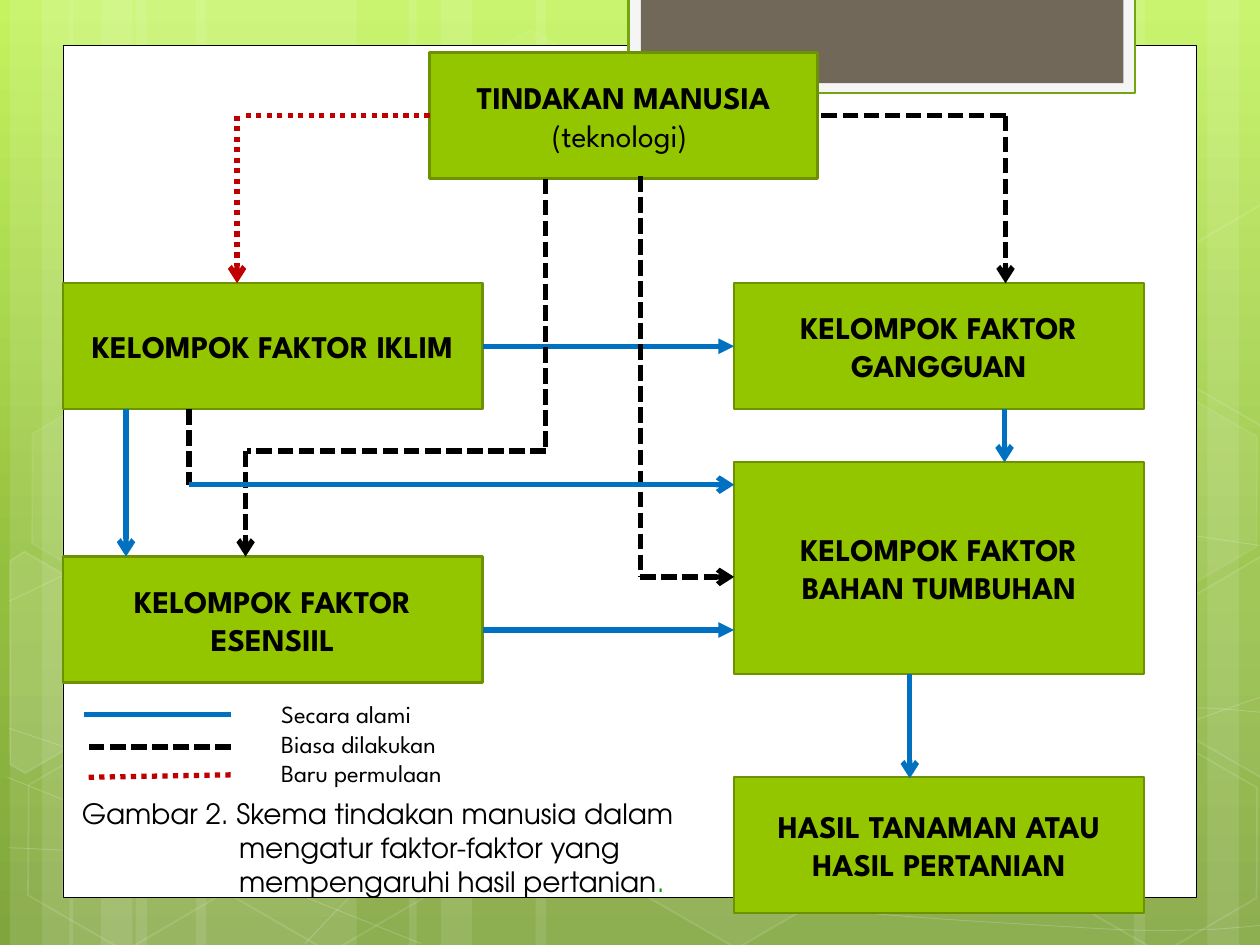
from copy import deepcopy

from lxml import etree
from pptx import Presentation
from pptx import util as u
from pptx.dml.color import RGBColor
from pptx.enum import dml, shapes, text
from pptx.oxml.ns import qn

BLUE, BLACK, RED, WHITE = "0070C0", "000000", "C00000", "FFFFFF"
NATURAL = (BLUE, None)
COMMON = (BLACK, dml.MSO_LINE.SQUARE_DOT)
EARLY = (RED, dml.MSO_LINE.ROUND_DOT)
TOP, LEFT, BOTTOM, RIGHT = range(4)


def rgb(value):
    return RGBColor.from_string(value)


def set_alpha(fill_parent, percent):
    color = fill_parent.find(qn("a:solidFill")).find(qn("a:srgbClr"))
    etree.SubElement(color, qn("a:alpha")).set("val", str(percent * 1000))


def paint(shape, fill=None, fill_alpha=100, line=None, width=1, line_alpha=100):
    shape.shadow.inherit = False
    properties = shape.element.spPr
    if fill:
        shape.fill.solid()
        shape.fill.fore_color.rgb = rgb(fill)
        if fill_alpha < 100:
            set_alpha(properties, fill_alpha)
    else:
        shape.fill.background()
    if line:
        shape.line.color.rgb = rgb(line)
        shape.line.width = u.Pt(width)
        if line_alpha < 100:
            set_alpha(properties.find(qn("a:ln")), line_alpha)
    else:
        shape.line.fill.background()


def add_block(slide, box, kind=shapes.MSO_SHAPE.RECTANGLE, **style):
    shape = slide.shapes.add_shape(kind, *map(u.Cm, box))
    paint(shape, **style)
    return shape


def add_outline(slide, box, points, close, **style):
    points = [(u.Cm(box[0] + x), u.Cm(box[1] + y)) for x, y in points]
    builder = slide.shapes.build_freeform(*points[0])
    builder.add_line_segments(points[1:], close=close)
    shape = builder.convert_to_shape()
    paint(shape, **style)
    return shape


def add_curve(slide, box, anchors, **style):
    """Smooth Bézier curve through the anchors."""
    padded = [anchors[0], *anchors, anchors[-1]]
    points = [anchors[0]]
    for a, b, c, d in zip(padded, padded[1:], padded[2:], padded[3:]):
        points += [tuple(q + (r - p) / 6 for p, q, r in zip(a, b, c)),
                   tuple(r - (s - q) / 6 for q, r, s in zip(b, c, d)), c]
    shape = add_outline(slide, box, points, False, **style)
    segments = list(shape.element.iter(qn("a:lnTo")))
    for first, second, third in zip(*[iter(segments)] * 3):
        first.tag = qn("a:cubicBezTo")
        for segment in (second, third):
            first.append(segment[0])
            segment.getparent().remove(segment)


def add_line(slide, box, start, end, style, head=None, head_at="a:tailEnd"):
    ends = [u.Cm(box[i] + point[i]) for point in (start, end) for i in (0, 1)]
    line = slide.shapes.add_connector(shapes.MSO_CONNECTOR.STRAIGHT, *ends)
    color, dash = style
    line.line.color.rgb = rgb(color)
    line.line.width = u.Pt(3)
    if dash:
        line.line.dash_style = dash
    properties = line.element.spPr
    if head:
        etree.SubElement(properties.find(qn("a:ln")), qn(head_at)).set("type", head)
    etree.SubElement(properties, qn("a:effectLst"))
    return line


def set_background(slide):
    fill = slide.background.fill
    fill.gradient()
    fill.gradient_angle = 270
    stops = slide.element.find(".//" + qn("a:gsLst"))
    stops.insert(1, deepcopy(stops[0]))
    for stop, (color, position) in zip(
            fill.gradient_stops, (("C3F35F", 0), ("93BF3F", 0.62), ("81A53E", 1))):
        stop.color.rgb = rgb(color)
        stop.position = position


def add_backdrop(slide, box):
    left, top, _, height = box
    # Light vertical stripes
    for x, width in ((2.74, 4.45), (0.2, 1.27), (0.85, 2.12), (3.95, 4.45),
                     (1.4, 1.27), (2.04, 2.12), (18.63, 4.45), (24.34, 1.27),
                     (22.86, 2.12), (10.8, 7.83), (8.25, 1.27), (8.89, 2.12)):
        add_block(slide, (left + x, top, width, height), fill=WHITE, fill_alpha=10)
    # Thin curves
    for anchors in (
            ((0.18, 17.09), (4.83, 17.22), (11.63, 16.89), (20.12, 15.67), (25.58, 14)),
            ((0.18, 12.12), (3.07, 10.95), (8.81, 9.83), (16.61, 9.83), (25.58, 11.02)),
            ((0.15, 15.67), (8.48, 19.02)),
            ((0.18, 14.68), (3.25, 15.65), (9.07, 17.09), (15.95, 18.24),
             (21.67, 18.69), (24, 18.75), (25.58, 18.64)),
            ((6.15, 19.02), (7.67, 17.55), (9.86, 16.23), (11.94, 15.47), (15.44, 14.68),
             (17.27, 14.45), (20.17, 14.27), (22.5, 14.27), (24.21, 14.27),
             (25.32, 14.35), (25.55, 14.38))):
        add_curve(slide, box, anchors, line=WHITE, width=0.5, line_alpha=20)
    # Hexagons: left, top, fill opacity, line opacity
    for x, y, fill_alpha, line_alpha in (
            (8.48, 0.91, 4, 8), (12.62, 14.96, 6, 12), (0.28, 15.01, 0, 12),
            (0.36, 7.92, 7, 8), (4.42, 15.04, 0, 12), (19.13, 11.51, 10, 12),
            (21.18, 15.06, 0, 12), (21.18, 7.98, 7, 8)):
        hexagon = add_block(slide, (left + x, top + y, 4.45, 3.86),
                            shapes.MSO_SHAPE.HEXAGON, fill=WHITE if fill_alpha else None,
                            fill_alpha=fill_alpha, line=WHITE, line_alpha=line_alpha)
        hexagon.adjustments[0] = 0.285
        hexagon.rotation = 30
    # Hexagons cut by the slide edges
    left_cut = ((0, 0.31), (0.15, 0), (2.4, 0), (3.5, 1.95), (2.4, 3.86), (2.05, 3.86))
    right_cut = ((0, 1.91), (1.08, 0), (1.32, 0), (3.45, 3.67), (3.33, 3.86), (1.1, 3.86))
    for x, y, points, fill, alpha in ((-0.84, 11.66, left_cut, WHITE, 10),
                                      (23.29, 11.28, right_cut, WHITE, 4),
                                      (23.29, 4.19, right_cut, None, 0)):
        add_outline(slide, (left + x, top + y), points, True, fill=fill,
                    fill_alpha=alpha, line=WHITE, line_alpha=12).rotation = 30


def add_panel(slide, box):
    left, top, _, _ = box
    add_block(slide, box, fill=WHITE, line=BLACK, width=0.5)
    # Tab at the top
    add_block(slide, (left + 11.4, top - 0.96, 10.21, 1.93),
              fill="F5F5F5", line="74A510", width=1.25)
    add_block(slide, (left + 11.65, top - 0.96, 9.73, 1.73), fill="71685A")


def set_font(paragraph, size, name="League Spartan", bold=False):
    paragraph.font.size = u.Pt(size)
    paragraph.font.name = name
    paragraph.font.bold = bold
    paragraph.font.color.rgb = rgb(BLACK)


def add_factor(slide, box, lines):
    shape = add_block(slide, box, fill="94C600", line="6D9200", width=1.25)
    frame = shape.text_frame
    frame.word_wrap = True
    frame.vertical_anchor = text.MSO_ANCHOR.MIDDLE
    frame.text = "\n".join(lines)
    for index, paragraph in enumerate(frame.paragraphs):
        paragraph.alignment = text.PP_ALIGN.CENTER
        set_font(paragraph, 18, bold=index == 0)
    return shape


def add_scheme(slide, box):
    left, top, _, _ = box
    # Factor boxes
    disturbance, climate, _, _, _, human = [
        add_factor(slide, (left + x, top + y, width, height), lines)
        for x, y, width, height, *lines in (
            (13.53, 4.8, 8.26, 2.54, "KELOMPOK FAKTOR GANGGUAN"),
            (0, 4.8, 8.46, 2.54, "KELOMPOK FAKTOR IKLIM"),
            (13.53, 14.76, 8.26, 2.74, "HASIL TANAMAN ATAU HASIL PERTANIAN"),
            (0, 10.31, 8.46, 2.54, "KELOMPOK FAKTOR ESENSIIL"),
            (13.53, 8.41, 8.26, 4.27, "KELOMPOK FAKTOR BAHAN TUMBUHAN"),
            (7.39, 0.15, 7.82, 2.54, "TINDAKAN MANUSIA", "(teknologi) "))]
    # Lines joined to the middle of a side
    add_line(slide, box, (7.39, 1.42), (3.61, 1.42), EARLY).begin_connect(human, LEFT)
    add_line(slide, box, (19, 1.42), (15.21, 1.42), COMMON).end_connect(human, RIGHT)
    link = add_line(slide, box, (13.53, 6.07), (8.46, 6.07), NATURAL,
                    "triangle", "a:headEnd")
    link.begin_connect(disturbance, LEFT)
    link.end_connect(climate, RIGHT)
    # Free lines and arrows
    add_line(slide, box, (13.53, 11.79), (8.46, 11.79), NATURAL, "triangle", "a:headEnd")
    for start, end, style, head in (
            ((9.73, 8.18), (3.71, 8.18), COMMON, None),
            ((19, 1.42), (19, 4.8), COMMON, "arrow"),
            ((17.07, 12.68), (17.07, 14.78), NATURAL, "arrow"),
            ((3.68, 8.18), (3.68, 10.31), COMMON, "arrow"),
            ((1.27, 7.34), (1.27, 10.31), NATURAL, "arrow"),
            ((3.51, 1.42), (3.51, 4.8), EARLY, "arrow"),
            ((9.73, 2.69), (9.73, 8.18), COMMON, None),
            ((11.64, 2.64), (11.64, 10.72), COMMON, None),
            ((11.64, 10.72), (13.53, 10.72), COMMON, "arrow"),
            ((2.54, 7.34), (2.54, 8.86), COMMON, None),
            ((2.54, 8.86), (13.53, 8.86), NATURAL, "arrow"),
            ((18.98, 7.34), (18.98, 8.41), NATURAL, "arrow")):
        add_line(slide, box, start, end, style, head)


def add_text_box(slide, box):
    frame = slide.shapes.add_textbox(*map(u.Cm, box)).text_frame
    frame.word_wrap = True
    frame.auto_size = text.MSO_AUTO_SIZE.SHAPE_TO_FIT_TEXT
    return frame


def add_caption(slide, box):
    paragraph = add_text_box(slide, box).paragraphs[0]
    set_font(paragraph, 16, "TeX Gyre Adventor")
    paragraph.add_run().text = ("Gambar 2. Skema tindakan manusia dalam mengatur "
                                "faktor-faktor yang mempengaruhi hasil pertanian")
    stop = paragraph.add_run()
    stop.text = "."
    stop.font.color.rgb = rgb("009900")
    # Hanging indent
    properties = paragraph._p.get_or_add_pPr()
    properties.set("marL", str(u.Cm(3.17)))
    properties.set("indent", str(-u.Cm(3.17)))


def add_legend(slide, box):
    left, top, width, height = box
    for style, start, end in ((NATURAL, 0.43, 0.43), (COMMON, 1.09, 1.09),
                              (EARLY, 1.7, 1.65)):
        add_line(slide, box, (2.95, end), (0, start), style)
    frame = add_text_box(slide, (left + 3.72, top, width - 3.72, height))
    frame.text = "Secara alami\nBiasa dilakukan\nBaru permulaan"
    for paragraph in frame.paragraphs:
        set_font(paragraph, 14)


def main():
    presentation = Presentation()
    presentation.slide_width, presentation.slide_height = u.Cm(25.4), u.Cm(19.05)
    slide = presentation.slides.add_slide(presentation.slide_layouts[6])
    panel = (1.27, 0.91, 22.86, 17.19)
    set_background(slide)
    add_backdrop(slide, (0, 0, 25.4, 19.05))
    add_panel(slide, panel)
    add_scheme(slide, panel)
    add_caption(slide, (1.4, 15.94, 14.38, 2.31))
    add_legend(slide, (1.7, 13.97, 10.9, 2.06))
    presentation.save("out.pptx")


if __name__ == "__main__":
    main()
